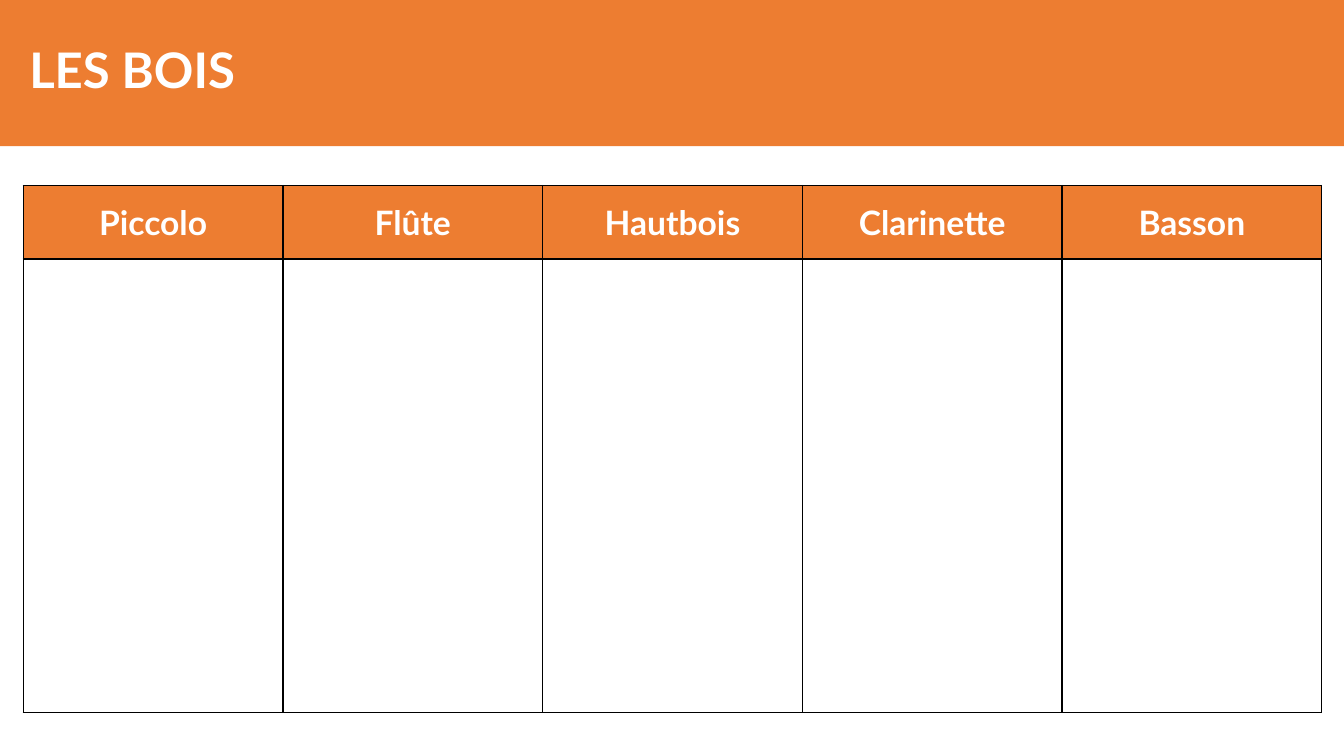
from pptx import Presentation
from pptx.dml.color import RGBColor
from pptx.enum.text import MSO_ANCHOR, MSO_AUTO_SIZE, PP_ALIGN
from pptx.oxml import parse_xml
from pptx.oxml.ns import nsdecls
from pptx.util import Inches, Pt

ORANGE = RGBColor(0xED, 0x7D, 0x31)
WHITE = RGBColor(0xFF, 0xFF, 0xFF)
BLACK = RGBColor(0x00, 0x00, 0x00)
FONT = "Lato"
SLIDE_WIDTH, SLIDE_HEIGHT = 13.33, 7.5
INSTRUMENTS = ["Piccolo", "Flûte", "Hautbois", "Clarinette", "Basson"]


def style_text(paragraph, size, alignment):
    paragraph.alignment = alignment
    font = paragraph.font
    font.name = FONT
    font.size = Pt(size)
    font.bold = True
    font.color.rgb = WHITE


def add_title_band(slide, left, top, width, height):
    title = slide.shapes.title
    title.left, title.top = Inches(left), Inches(top)
    title.width, title.height = Inches(width), Inches(height)
    title.fill.solid()
    title.fill.fore_color.rgb = ORANGE
    frame = title.text_frame
    frame.text = "LES BOIS"
    frame.word_wrap = True
    frame.auto_size = MSO_AUTO_SIZE.NONE
    frame.vertical_anchor = MSO_ANCHOR.MIDDLE
    frame.margin_left = Inches(0.29)
    paragraph = frame.paragraphs[0]
    paragraph.line_spacing = 0.9
    style_text(paragraph, 35, PP_ALIGN.LEFT)


def format_cell(cell, fill_color):
    """Draw a thin black border on every side, then fill the cell."""
    properties = cell._tc.get_or_add_tcPr()
    for side in ("lnL", "lnR", "lnT", "lnB"):
        properties.append(parse_xml(
            f'<a:{side} {nsdecls("a")} w="{Pt(1)}"><a:solidFill>'
            f'<a:srgbClr val="{BLACK}"/></a:solidFill></a:{side}>'))
    cell.fill.solid()
    cell.fill.fore_color.rgb = fill_color


def add_instrument_table(slide, left, top, width, height, header_height=0.73):
    """Place one column per instrument: a header above an empty cell."""
    table = slide.shapes.add_table(
        2, len(INSTRUMENTS), Inches(left), Inches(top),
        Inches(width), Inches(height)).table
    table.horz_banding = False
    table.rows[0].height = Inches(header_height)
    table.rows[1].height = Inches(height - header_height)
    for column, instrument in enumerate(INSTRUMENTS):
        header = table.cell(0, column)
        header.text = instrument
        header.vertical_anchor = MSO_ANCHOR.MIDDLE
        style_text(header.text_frame.paragraphs[0], 24, PP_ALIGN.CENTER)
        format_cell(header, ORANGE)
        format_cell(table.cell(1, column), WHITE)


def main():
    presentation = Presentation()
    presentation.slide_width = Inches(SLIDE_WIDTH)
    presentation.slide_height = Inches(SLIDE_HEIGHT)
    slide = presentation.slides.add_slide(presentation.slide_layouts[5])
    add_title_band(slide, 0, 0, SLIDE_WIDTH, 1.45)
    add_instrument_table(slide, 0.23, 1.84, 12.88, 5.23)
    presentation.save("out.pptx")


if __name__ == "__main__":
    main()
